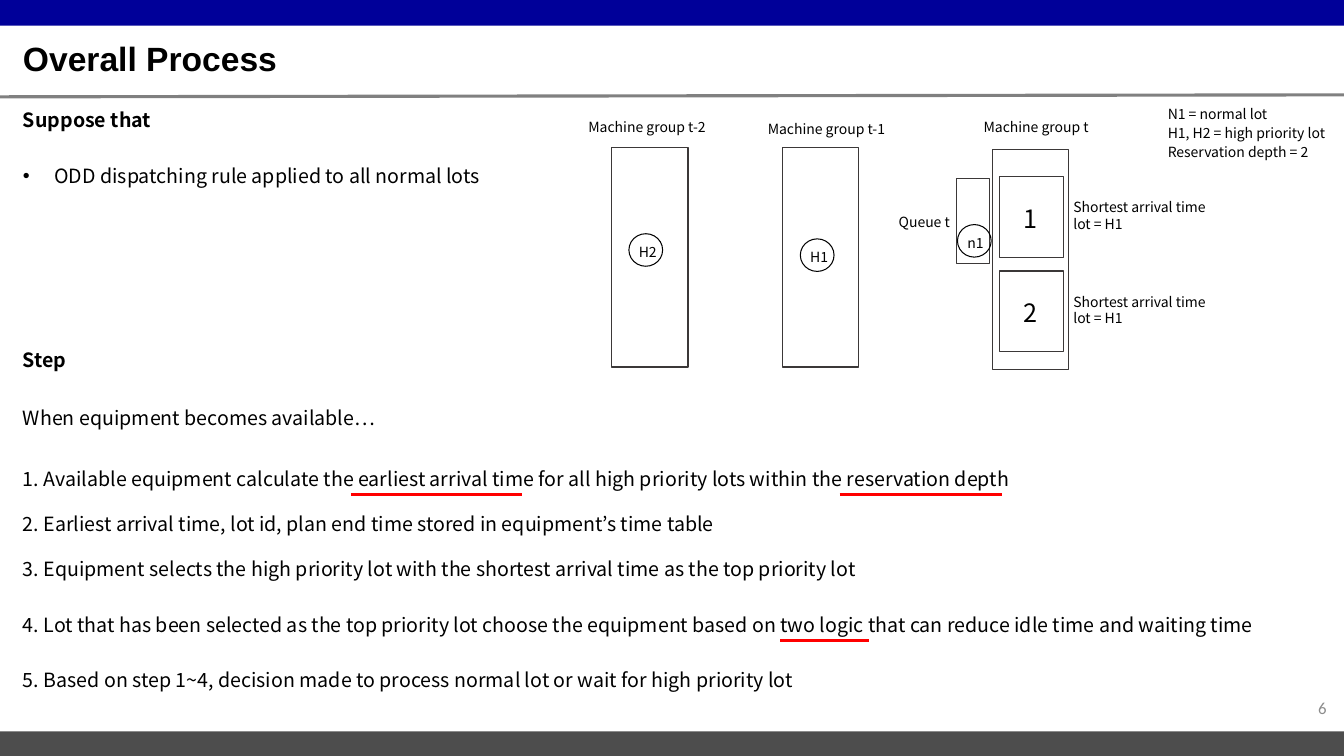
"""Build the Overall Process slide about lot reservation between machine groups."""
import pptx
import pptx.dml.color
import pptx.enum.shapes
import pptx.enum.text
import pptx.oxml.ns
import pptx.util
import lxml.etree

Cm = pptx.util.Cm
Pt = pptx.util.Pt
Shape = pptx.enum.shapes.MSO_SHAPE
Anchor = pptx.enum.text.MSO_ANCHOR
Align = pptx.enum.text.PP_ALIGN
qn = pptx.oxml.ns.qn


def color(hex_code):
    return pptx.dml.color.RGBColor.from_string(hex_code)


class ProcessSlide:
    font = "Noto Sans CJK KR"
    ink = "000000"
    frame = "3B3838"
    accent = "FF0000"
    body_size = 14
    note_size = 10

    def __init__(self, slide):
        self.shapes = slide.shapes

    def text(self, content, left, top, width, height=0.86, *, size=body_size,
             font=font, fill=ink, bold=False, align=Align.LEFT,
             anchor=Anchor.TOP, spacing=None, bullet=False):
        box = self.shapes.add_textbox(Cm(left), Cm(top), Cm(width), Cm(height))
        box.text_frame.word_wrap = True
        box.text_frame.vertical_anchor = anchor
        paragraph = box.text_frame.paragraphs[0]
        paragraph.alignment = align
        if spacing:
            paragraph.line_spacing = spacing
        if bullet:
            properties = paragraph._p.get_or_add_pPr()
            properties.set("marL", str(Cm(0.79)))
            properties.set("indent", str(-Cm(0.79)))
            lxml.etree.SubElement(properties, qn("a:buFont")).set("typeface", "Arial")
            lxml.etree.SubElement(properties, qn("a:buChar")).set("char", "•")
        run = paragraph.add_run()
        run.text = content
        run.font.name = font
        run.font.size = Pt(size)
        run.font.bold = bold
        run.font.color.rgb = color(fill)
        east_asian = lxml.etree.SubElement(run._r.get_or_add_rPr(), qn("a:ea"))
        east_asian.set("typeface", font)

    def note(self, content, left, top, width, height=0.69):
        self.text(content, left, top, width, height, size=self.note_size)

    def shape(self, kind, left, top, width, height, fill=None, line=None):
        item = self.shapes.add_shape(kind, Cm(left), Cm(top), Cm(width), Cm(height))
        item.shadow.inherit = False
        if fill:
            item.fill.solid()
            item.fill.fore_color.rgb = color(fill)
        else:
            item.fill.background()
        if line:
            item.line.color.rgb = color(line)
            item.line.width = Pt(0.75)
        else:
            item.line.fill.background()

    def box(self, left, top, width, height):
        self.shape(Shape.RECTANGLE, left, top, width, height, line=self.frame)

    def lot(self, name, left, top):
        self.shape(Shape.OVAL, left, top, 0.85, 0.82, line=self.ink)
        self.note(name, left, top + 0.12, 1.09)

    def line(self, x1, y1, x2, y2, stroke=accent):
        rule = self.shapes.add_connector(
            pptx.enum.shapes.MSO_CONNECTOR.STRAIGHT, Cm(x1), Cm(y1), Cm(x2), Cm(y2))
        rule.line.color.rgb = color(stroke)
        rule.line.width = Pt(2.25)
        lxml.etree.SubElement(rule._element.spPr, qn("a:effectLst"))


def draw_frame(page):
    page.shape(Shape.RECTANGLE, 0, 0, 33.87, 0.65, fill="000099")
    page.shape(Shape.RECTANGLE, 0, 18.43, 33.87, 0.62, fill="4D4D4D")
    page.line(0, 2.44, 33.87, 2.39, "808080")
    page.text("Overall Process", 0.33, 0.98, 31.67, 1.09, size=24, font="Arial",
              bold=True, anchor=Anchor.MIDDLE, spacing=0.9)
    page.text("6", 26.06, 17.32, 7.62, 1.02, size=12, font="Calibri",
              fill="8C8C8C", align=Align.RIGHT, anchor=Anchor.MIDDLE)


def draw_steps(page):
    page.text("Suppose that", 0.33, 2.59, 9.98, bold=True)
    page.text("ODD dispatching rule applied to all normal lots",
              0.33, 4.01, 24.2, 1.45, bullet=True)
    page.text("Step", 0.33, 8.64, 5.56, bold=True)
    steps = [
        (10.11, "When equipment becomes available…"),
        (11.63, "1. Available equipment calculate the earliest arrival time for all "
                "high priority lots within the reservation depth"),
        (12.78, "2. Earliest arrival time, lot id, plan end time stored in "
                "equipment’s time table"),
        (13.92, "3. Equipment selects the high priority lot with the shortest "
                "arrival time as the top priority lot"),
        (15.32, "4. Lot that has been selected as the top priority lot choose the "
                "equipment based on two logic that can reduce idle time and waiting time"),
        (16.71, "5. Based on step 1~4, decision made to process normal lot or wait "
                "for high priority lot"),
    ]
    for top, step in steps:
        page.text(step, 0.33, top, 33.05)
    for start, end, level in [(8.84, 13.16, 12.47), (21.16, 25.25, 12.47),
                              (19.66, 21.89, 16.13)]:
        page.line(start, level, end, level)


def draw_machines(page):
    groups = [("t-2", 14.58, 2.87, 15.42, 3.71),
              ("t-1", 19.1, 2.9, 19.71, 3.71),
              ("t", 24.54, 2.87, 25.02, 3.78)]
    for group, label_left, label_top, left, top in groups:
        page.note(f"Machine group {group}", label_left, label_top, 6.02)
        page.box(left, top, 1.92, 5.54)

    for number, top in [("1", 4.45), ("2", 6.83)]:
        page.box(25.2, top, 1.6, 2.03)
        page.text(number, 25.55, top + 0.55, 0.69, 1.02, size=18)
        page.note("Shortest arrival time lot = H1", 26.8, top + 0.43, 4.09, 1.12)

    page.box(24.1, 4.5, 0.84, 2.13)
    page.note("Queue t", 22.4, 5.26, 2.74)
    for lot, left, top in [("H2", 15.85, 5.89), ("H1", 20.17, 6.02),
                           ("n1", 24.13, 5.66)]:
        page.lot(lot, left, top)

    legend = ["N1 = normal lot", "H1, H2 = high priority lot", "Reservation depth = 2"]
    for row, entry in enumerate(legend):
        page.note(entry, 29.18, 2.54 + 0.47 * row, 5.11)


def main():
    deck = pptx.Presentation()
    deck.slide_width = Cm(33.87)
    deck.slide_height = Cm(19.05)
    page = ProcessSlide(deck.slides.add_slide(deck.slide_layouts[6]))
    draw_frame(page)
    draw_steps(page)
    draw_machines(page)
    deck.save("out.pptx")


if __name__ == "__main__":
    main()
